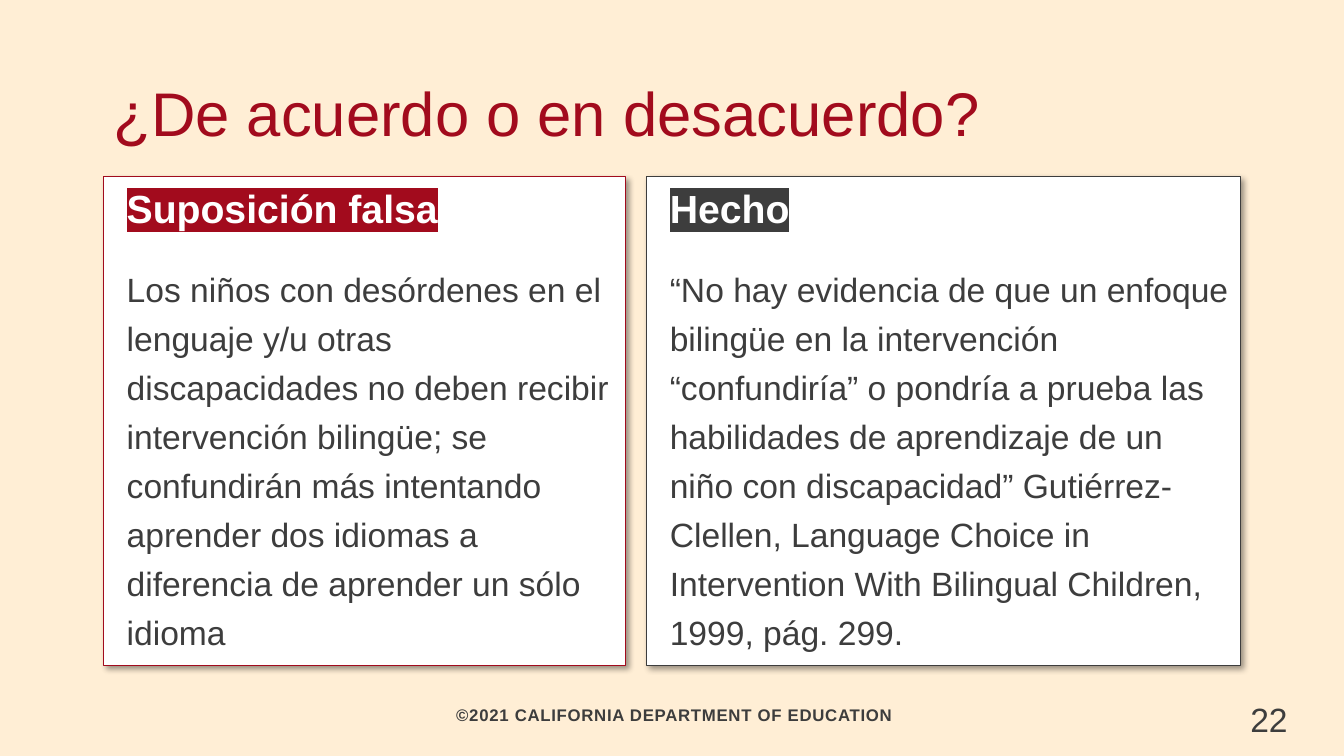
import pptx
import pptx.util
import pptx.dml.color
import pptx.enum.shapes
import pptx.enum.text
import pptx.oxml
import pptx.oxml.ns
from pptx.util import Pt

ANCHOR = pptx.enum.text.MSO_ANCHOR
RED, GRAY, WHITE = "A20B1D", "3D3D3D", "FFFFFF"
NS = pptx.oxml.ns.nsdecls("a")


def color(code):
    return pptx.dml.color.RGBColor.from_string(code)


def write(para, text, size, code, bold=False):
    """Fill a paragraph with one run in Arial and return the run's rPr."""
    run = para.add_run()
    run.text = text
    para.font.name = "Arial"
    para.font.size = Pt(size)
    para.font.bold = bold
    para.font.color.rgb = color(code)
    return run._r.get_or_add_rPr()


deck = pptx.Presentation()
deck.slide_width, deck.slide_height = Pt(960), Pt(540)
slide = deck.slides.add_slide(deck.slide_layouts[6])
slide.background.fill.solid()
slide.background.fill.fore_color.rgb = color("FFEED5")
shapes = slide.shapes

# Footer
foot = shapes.add_textbox(Pt(74), Pt(501), Pt(812), Pt(21)).text_frame
foot.word_wrap = True
foot.vertical_anchor = ANCHOR.MIDDLE
para = foot.paragraphs[0]
para.alignment = pptx.enum.text.PP_ALIGN.CENTER
para.line_spacing = 0.95
props = para._p.get_or_add_pPr()
props.set("marL", str(Pt(36)))
props.set("indent", str(Pt(-32.4)))
look = write(para, "©2021 CALIFORNIA DEPARTMENT OF EDUCATION", 12, GRAY, True)
look.set("spc", "50")

# Title
title = shapes.add_textbox(Pt(74), Pt(20), Pt(864), Pt(90)).text_frame
title.word_wrap = True
title.vertical_anchor = ANCHOR.BOTTOM
title.paragraphs[0].line_spacing = 0.85
write(title.paragraphs[0], "¿De acuerdo o en desacuerdo?", 44, RED)

# Cards: left, width, accent, heading, body
cards = [
    (74, 372.5, RED, "Suposición falsa",
     "Los niños con desórdenes en el lenguaje y/u otras discapacidades no "
     "deben recibir intervención bilingüe; se confundirán más intentando "
     "aprender dos idiomas a diferencia de aprender un sólo idioma"),
    (462, 424, GRAY, "Hecho",
     "“No hay evidencia de que un enfoque bilingüe en la intervención "
     "“confundiría” o pondría a prueba las habilidades de aprendizaje de un "
     "niño con discapacidad” Gutiérrez-Clellen, Language Choice in "
     "Intervention With Bilingual Children, 1999, pág. 299."),
]
for left, width, accent, head, body in cards:
    card = shapes.add_shape(pptx.enum.shapes.MSO_SHAPE.RECTANGLE,
                            Pt(left), Pt(126), Pt(width), Pt(349.5))
    card.fill.solid()
    card.fill.fore_color.rgb = color(WHITE)
    card.line.color.rgb = color(accent)
    card.line.width = Pt(0.75)
    card._element.spPr.append(pptx.oxml.parse_xml(
        f'<a:effectLst {NS}><a:outerShdw blurRad="{Pt(4)}" dist="{Pt(3)}" '
        'dir="2700000" algn="tl" rotWithShape="0"><a:srgbClr val="000000">'
        '<a:alpha val="40000"/></a:srgbClr></a:outerShdw></a:effectLst>'))

    frame = card.text_frame
    frame.word_wrap = True
    frame.vertical_anchor = ANCHOR.MIDDLE
    top, rest = frame.paragraphs[0], frame.add_paragraph()
    for para in (top, rest):
        para.alignment = pptx.enum.text.PP_ALIGN.LEFT
        para.space_after = Pt(5)
        para._p.get_or_add_pPr().set("marL", str(Pt(9.4)))
    top.line_spacing = 0.9
    rest.line_spacing = Pt(35)
    rest.space_before = Pt(15)
    look = write(top, head, 28, WHITE, True)
    look.append(pptx.oxml.parse_xml(
        f'<a:highlight {NS}><a:srgbClr val="{accent}"/></a:highlight>'))
    write(rest, body, 24, GRAY)

# Page number
page = shapes.add_textbox(Pt(886), Pt(496), Pt(74), Pt(34)).text_frame
page.word_wrap = True
write(page.paragraphs[0], "22", 24, GRAY)

deck.save("out.pptx")
